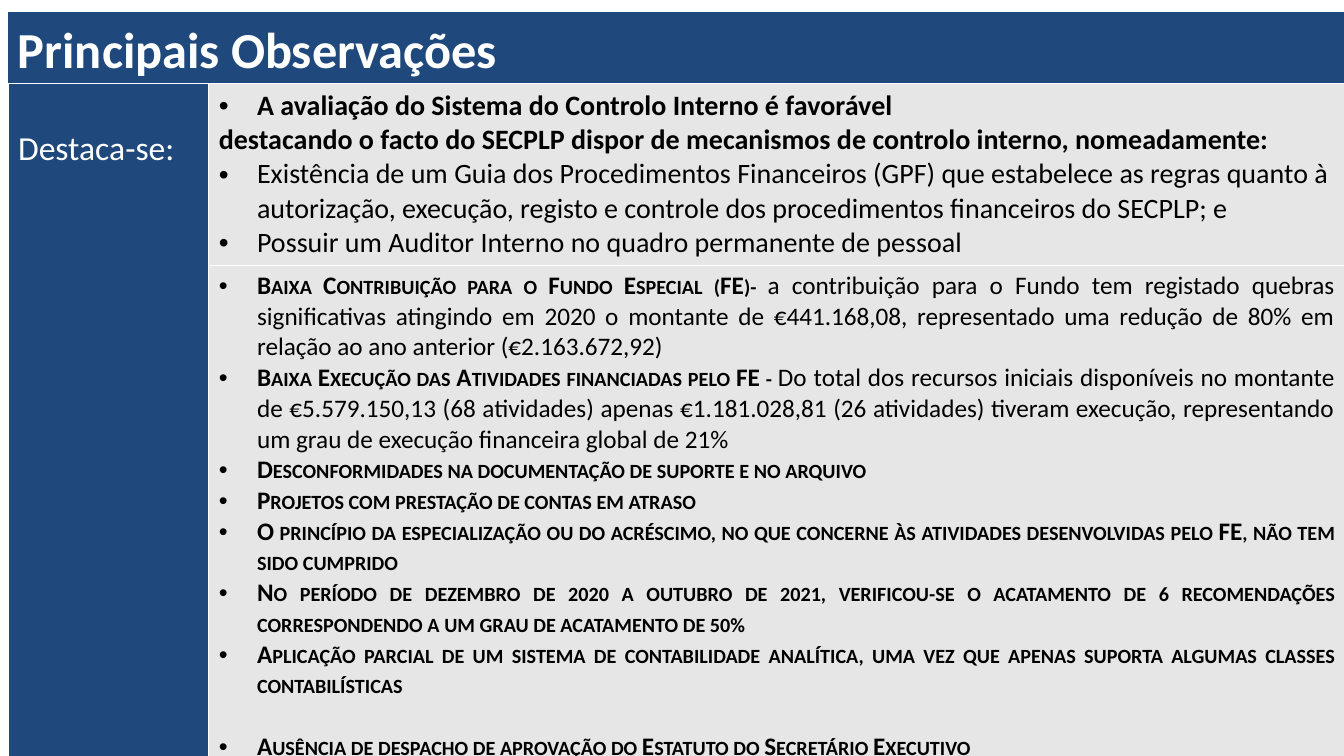
from lxml import etree
from pptx import Presentation
from pptx.dml.color import RGBColor
from pptx.enum.shapes import MSO_SHAPE
from pptx.enum.text import PP_ALIGN
from pptx.oxml.ns import qn
from pptx.util import Inches, Pt

RECTANGLE = MSO_SHAPE.RECTANGLE
LEFT, JUSTIFY = PP_ALIGN.LEFT, PP_ALIGN.JUSTIFY
NAVY = RGBColor(0x1F, 0x49, 0x7D)
GREY = RGBColor(0xE6, 0xE6, 0xE6)
WHITE = RGBColor(0xFF, 0xFF, 0xFF)
BLACK = RGBColor(0, 0, 0)
FONT = "Calibri"

# Grid
EDGE, TOP, BANNER_HEIGHT = Inches(0.08), Inches(0.12), Inches(0.71)
COLUMNS = [Inches(1.99), Inches(11.27)]
ROWS = [Inches(1.66), Inches(4.61), Inches(0.4)]
INDENT = Inches(0.38)

# Each paragraph: bold part, regular part, bulleted, alignment
CONTROL_POINTS = [
    ("A avaliação do Sistema do Controlo Interno é favorável", "", True, JUSTIFY),
    ("destacando o facto do SECPLP dispor de mecanismos de controlo interno, nomeadamente:",
     "", False, JUSTIFY),
    ("", "Existência de um Guia dos Procedimentos Financeiros (GPF) que estabelece as regras "
     "quanto à autorização, execução, registo e controle dos procedimentos financeiros do "
     "SECPLP; e", True, LEFT),
    ("", "Possuir um Auditor Interno no quadro permanente de pessoal", True, LEFT),
]
WEAKNESSES = [(heading, detail, True, JUSTIFY) for heading, detail in [
    ("Baixa Contribuição para o Fundo Especial (FE)- ",
     "a contribuição para o Fundo tem registado quebras significativas atingindo em 2020 o "
     "montante de €441.168,08, representado uma redução de 80% em relação ao ano anterior "
     "(€2.163.672,92)"),
    ("Baixa Execução das Atividades financiadas pelo FE - ",
     "Do total dos recursos iniciais disponíveis no montante de €5.579.150,13 (68 atividades) "
     "apenas €1.181.028,81 (26 atividades) tiveram execução, representando um grau de execução "
     "financeira global de 21%"),
    ("Desconformidades na documentação de suporte e no arquivo", ""),
    ("Projetos com prestação de contas em atraso", ""),
    ("O princípio da especialização ou do acréscimo, no que concerne às atividades "
     "desenvolvidas pelo FE, não tem sido cumprido", ""),
    ("No período de dezembro de 2020 a outubro de 2021, verificou-se o acatamento de 6 "
     "recomendações correspondendo a um grau de acatamento de 50%", ""),
    ("Aplicação parcial de um sistema de contabilidade analítica, uma vez que apenas suporta "
     "algumas classes contabilísticas", ""),
    ("Ausência de despacho de aprovação do Estatuto do Secretário Executivo", ""),
]]


def style_run(run, size, color, bold=False):
    run.font.name = FONT
    run.font.size = Pt(size)
    run.font.bold = bold
    run.font.color.rgb = color


def fill_list(cell, points, size, small_caps):
    frame = cell.text_frame
    for index, (strong, plain, bulleted, alignment) in enumerate(points):
        paragraph = frame.add_paragraph() if index else frame.paragraphs[0]
        paragraph.alignment = alignment
        if bulleted:
            properties = paragraph._p.get_or_add_pPr()
            properties.set("marL", str(INDENT))
            properties.set("indent", str(-INDENT))
            etree.SubElement(properties, qn("a:buFont"), typeface="Arial")
            etree.SubElement(properties, qn("a:buChar"), char="•")
        for text, bold in ((strong, True), (plain, False)):
            if text:
                run = paragraph.add_run()
                run.text = text
                style_run(run, size, BLACK, bold)
                if bold and small_caps:
                    run._r.get_or_add_rPr().set("cap", "small")


presentation = Presentation()
presentation.slide_width = Inches(13.33)
presentation.slide_height = Inches(7.5)
slide = presentation.slides.add_slide(presentation.slide_layouts[6])

# Title banner
banner = slide.shapes.add_shape(
    RECTANGLE, EDGE, TOP, presentation.slide_width - EDGE, BANNER_HEIGHT)
banner.shadow.inherit = False
banner.fill.solid()
banner.fill.fore_color.rgb = NAVY
banner.line.fill.background()
banner.text_frame.text = "Principais Observações"
banner.text_frame.paragraphs[0].alignment = LEFT
style_run(banner.text_frame.paragraphs[0].runs[0], 36, WHITE, True)

# Observations table
observations = slide.shapes.add_table(
    len(ROWS), len(COLUMNS), EDGE, TOP + BANNER_HEIGHT, sum(COLUMNS), sum(ROWS)).table
observations.first_row = observations.horz_banding = False
for column, width in zip(observations.columns, COLUMNS):
    column.width = width
for row, height in zip(observations.rows, ROWS):
    row.height = height

# Thin white borders come before the fill in each cell's properties
for row in observations.rows:
    for cell, color in zip(row.cells, (NAVY, GREY)):
        properties = cell._tc.get_or_add_tcPr()
        for side in ("a:lnL", "a:lnR", "a:lnT", "a:lnB"):
            border = etree.SubElement(properties, qn(side), w=str(Pt(1)))
            solid = etree.SubElement(border, qn("a:solidFill"))
            etree.SubElement(solid, qn("a:srgbClr"), val=str(WHITE))
        cell.fill.solid()
        cell.fill.fore_color.rgb = color

# Row label
label = observations.cell(0, 0)
label.merge(observations.cell(len(ROWS) - 1, 0))
label.margin_top = Inches(0.45)
label.text_frame.text = "Destaca-se:"
style_run(label.text_frame.paragraphs[0].runs[0], 24, WHITE)

# Findings, with the last weakness set apart by one line
fill_list(observations.cell(0, 1), CONTROL_POINTS, 20, False)
fill_list(observations.cell(1, 1), WEAKNESSES, 18, True)
observations.cell(1, 1).text_frame.paragraphs[-1].space_before = Pt(22)

presentation.save("out.pptx")
